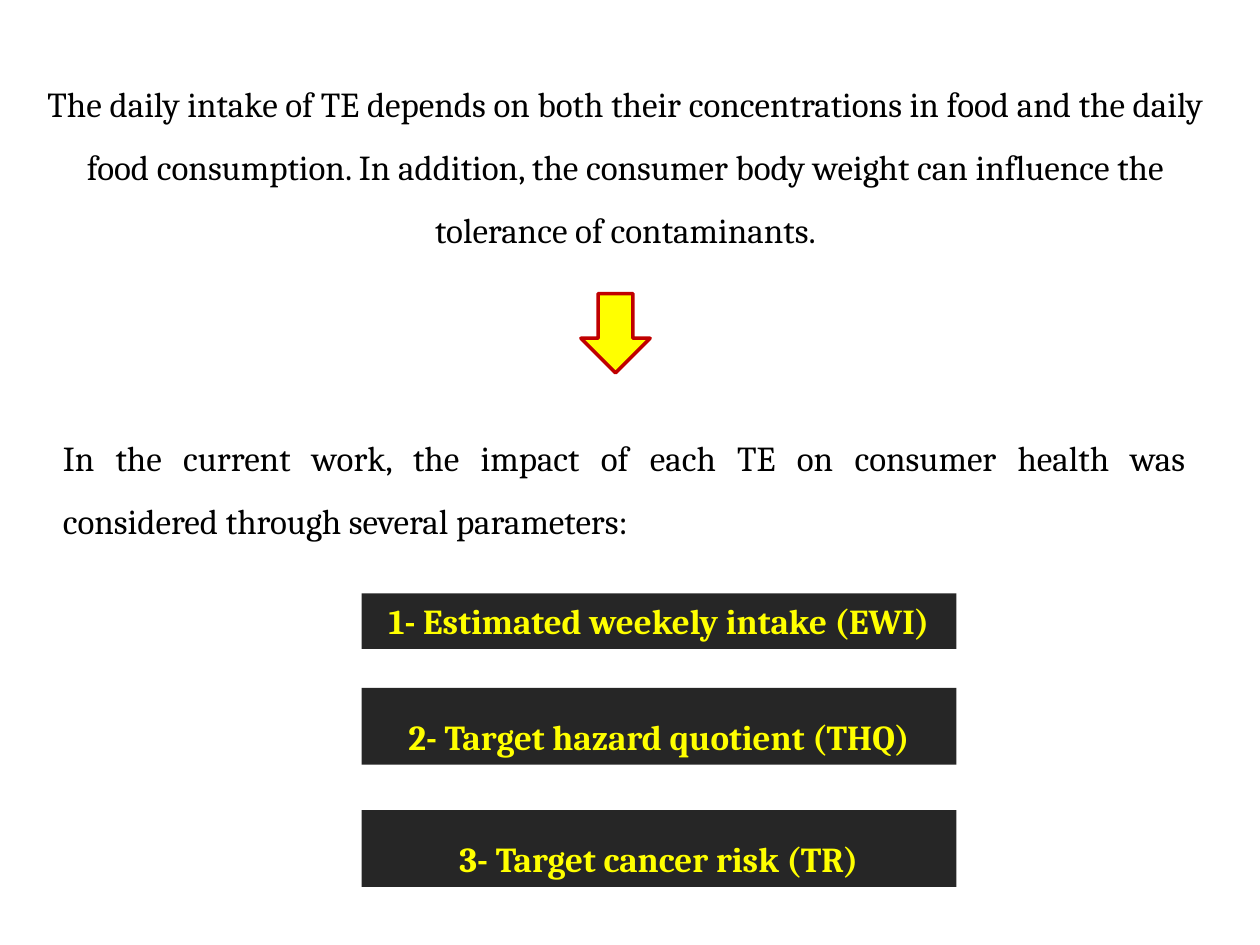
from pptx import Presentation
from pptx.dml.color import RGBColor
from pptx.enum.shapes import MSO_SHAPE
from pptx.enum.text import MSO_ANCHOR, MSO_AUTO_SIZE, PP_ALIGN
from pptx.util import Inches, Pt

CENTER, JUSTIFY = PP_ALIGN.CENTER, PP_ALIGN.JUSTIFY
TOP = MSO_ANCHOR.TOP
GROW = MSO_AUTO_SIZE.SHAPE_TO_FIT_TEXT
RECTANGLE, RIGHT_ARROW = MSO_SHAPE.RECTANGLE, MSO_SHAPE.RIGHT_ARROW

# Content: text, box (left, top, width, height), alignment
STATEMENTS = [
    ("The daily intake of TE depends on both their concentrations in food and "
     "the daily food consumption. In addition, the consumer body weight can "
     "influence the tolerance of contaminants.",
     (0.12, 0.44, 9.69, 1.56), CENTER),
    ("In the current work, the impact of each TE on consumer health was "
     "considered through several parameters:",
     (0.4, 3.25, 9.11, 1.06), JUSTIFY),
]
# Content: text, top, height, line spacing
PARAMETERS = [
    ("Estimated weekely intake (EWI)", 4.71, 0.44, 1.0),
    ("Target hazard quotient (THQ)", 5.46, 0.61, 1.5),
    ("Target cancer risk (TR)", 6.43, 0.61, 1.5),
]
PARAMETER_LEFT, PARAMETER_WIDTH = 2.87, 4.72
ARROW_BOX = (4.57, 2.37, 0.63, 0.55)

THEME = {
    "font": "Cambria",
    "size": Pt(20),
    "text": RGBColor(0x00, 0x00, 0x00),
    "bar": RGBColor(0x26, 0x26, 0x26),
    "highlight": RGBColor(0xFF, 0xFF, 0x00),
    "arrow_line": RGBColor(0xC0, 0x00, 0x00),
}


def apply(target, values):
    for name, value in values.items():
        setattr(target, name, value)


def inches(box):
    return [Inches(length) for length in box]


def write(shape, text, color, alignment, line_spacing, bold=False):
    frame = shape.text_frame
    apply(frame, {"word_wrap": True, "auto_size": GROW, "vertical_anchor": TOP})
    paragraph = frame.paragraphs[0]
    apply(paragraph, {"alignment": alignment, "line_spacing": line_spacing})
    run = paragraph.add_run()
    run.text = text
    apply(run.font, {"name": THEME["font"], "size": THEME["size"], "bold": bold})
    run.font.color.rgb = color


def add_filled(slide, preset, box, color):
    shape = slide.shapes.add_shape(preset, *inches(box))
    shape.shadow.inherit = False
    shape.fill.solid()
    shape.fill.fore_color.rgb = color
    return shape


def main():
    presentation = Presentation()
    apply(presentation, {"slide_width": Inches(10), "slide_height": Inches(7.5)})
    slide = presentation.slides.add_slide(presentation.slide_layouts[6])

    # Statements
    for text, box, alignment in STATEMENTS:
        statement = slide.shapes.add_textbox(*inches(box))
        write(statement, text, THEME["text"], alignment, 1.5)

    # Numbered parameter bars
    for number, (text, top, height, spacing) in enumerate(PARAMETERS, start=1):
        box = (PARAMETER_LEFT, top, PARAMETER_WIDTH, height)
        bar = add_filled(slide, RECTANGLE, box, THEME["bar"])
        bar.line.fill.background()
        write(bar, f"{number}- {text}", THEME["highlight"], CENTER, spacing, bold=True)

    # Arrow pointing down from the first statement to the second
    arrow = add_filled(slide, RIGHT_ARROW, ARROW_BOX, THEME["highlight"])
    arrow.rotation = 90
    arrow.line.color.rgb = THEME["arrow_line"]
    arrow.line.width = Pt(2)

    presentation.save("out.pptx")


if __name__ == "__main__":
    main()
